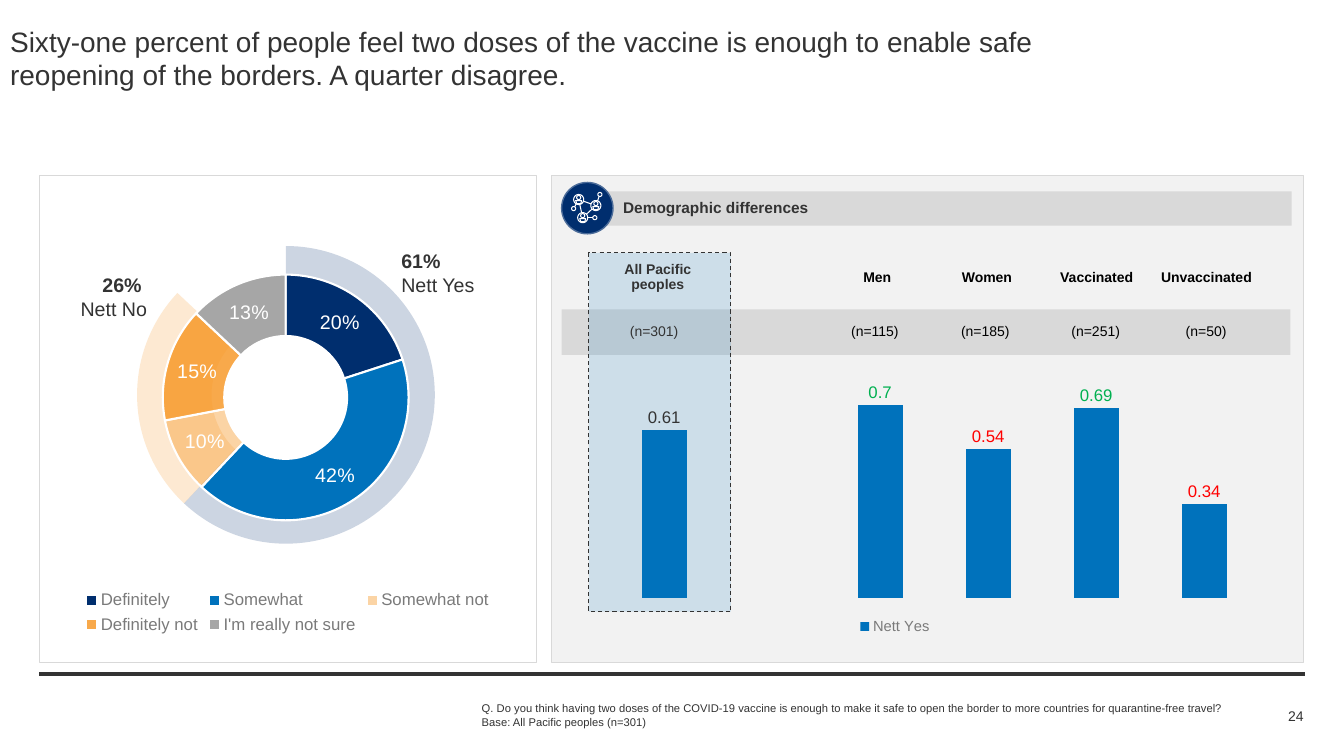
import math
from dataclasses import dataclass
from lxml import etree
from pptx import Presentation
from pptx import util as u
from pptx.chart import data as cd
from pptx.dml import color as col
from pptx.enum import chart as ch, dml, shapes as sh, text as tx
from pptx.oxml import ns


@dataclass
class Theme:
    font: str = "Arial"
    ink: str = "333333"
    black: str = "000000"
    white: str = "FFFFFF"
    navy: str = "002E6E"
    rim: str = "4C6C99"
    blue: str = "0072BC"
    gold: str = "F7941E"
    grey: str = "A6A6A6"
    mute: str = "7A7A7A"
    band: str = "D9D9D9"
    pale: str = "F2F2F2"
    up: str = "00B050"
    down: str = "FF0000"
    title: float = 20
    big: float = 14
    mid: float = 12
    head: float = 11
    key: float = 10.5
    base: float = 10
    note: float = 8


T = Theme()
IN = u.Inches
NO_GRID = "{2D5ABB26-0587-4C30-8999-92F81FD0307C}"


def rgb(code):
    return col.RGBColor.from_string(code)


def paint(fill, code, alpha=100):
    if code is None:
        fill.background()
        return
    fill.solid()
    fill.fore_color.rgb = rgb(code)
    if alpha < 100:
        tone = fill._xPr.find(ns.qn("a:solidFill"))[0]
        etree.SubElement(tone, ns.qn("a:alpha"), val=str(alpha * 1000))


def style(font, size, code=T.ink, bold=False):
    font.name, font.size, font.bold = T.font, u.Pt(size), bold
    font.color.rgb = rgb(code)


def place(host, box, inner=False):
    """Give a plot area or a legend a fixed place in its chart."""
    for old in host.findall(ns.qn("c:layout")):
        host.remove(old)
    lay = etree.Element(ns.qn("c:layout"))
    spot = etree.SubElement(lay, ns.qn("c:manualLayout"))
    tags = [("layoutTarget", "inner")] if inner else []
    tags += zip(("xMode", "yMode", "x", "y", "w", "h"), ("edge", "edge") + box)
    for tag, val in tags:
        etree.SubElement(spot, ns.qn("c:" + tag), val=str(val))
    host.insert(0 if inner else 1, lay)


def circle(x, y, r, n=24):
    turns = [2 * math.pi * i / n for i in range(n)]
    return [(x + r * math.cos(a), y + r * math.sin(a)) for a in turns]


def link(a, b):
    """Join the rims of two circles (x, y, r)."""
    gap = math.dist(a[:2], b[:2])
    ux, uy = (b[0] - a[0]) / gap, (b[1] - a[1]) / gap
    return [(a[0] + ux * a[2], a[1] + uy * a[2]), (b[0] - ux * b[2], b[1] - uy * b[2])]


class Deck:
    def __init__(self):
        self.prs = Presentation()
        self.prs.slide_width, self.prs.slide_height = IN(13.33), IN(7.5)
        self.slide = self.prs.slides.add_slide(self.prs.slide_layouts[6])
        self.shapes = self.slide.shapes

    def finish(self, item, fill, alpha, line, width):
        item.shadow.inherit = False
        paint(item.fill, fill, alpha)
        paint(item.line.fill, line)
        if line:
            item.line.width = u.Pt(width)
        return item

    def shape(self, box, fill=None, line=None, width=0.75, alpha=100, kind="RECTANGLE"):
        item = self.shapes.add_shape(sh.MSO_SHAPE[kind], *map(IN, box))
        return self.finish(item, fill, alpha, line, width)

    def draw(self, parts, line, width):
        form = None
        for part in parts:
            pts = [(IN(x), IN(y)) for x, y in part]
            if form is None:
                form = self.shapes.build_freeform(*pts[0])
            else:
                form.move_to(*pts[0])
            form.add_line_segments(pts[1:], close=len(pts) > 2)
        self.finish(form.convert_to_shape(), None, 100, line, width)

    def line(self, start, end, code, width):
        item = self.shapes.add_connector(sh.MSO_CONNECTOR.STRAIGHT, *map(IN, start + end))
        item.line.color.rgb, item.line.width = rgb(code), u.Pt(width)
        etree.SubElement(item._element.spPr, ns.qn("a:effectLst"))

    def text(self, box, lines, size, bolds=(), align="LEFT", anchor="TOP", inset=(0, 0)):
        frame = self.shapes.add_textbox(*map(IN, box)).text_frame
        frame.word_wrap = True
        frame.vertical_anchor = tx.MSO_ANCHOR[anchor]
        frame.margin_left = frame.margin_right = IN(inset[0])
        frame.margin_top = frame.margin_bottom = IN(inset[1])
        frame.text = "\n".join(lines)
        for i, para in enumerate(frame.paragraphs):
            para.alignment = tx.PP_ALIGN[align]
            for run in para.runs:
                style(run.font, size, bold=i in bolds)

    def row(self, box, words, bold, foot):
        grid = self.shapes.add_table(1, len(words), *map(IN, box)).table
        grid.first_row = grid.horz_banding = False
        grid._tbl.tblPr.find(ns.qn("a:tableStyleId")).text = NO_GRID
        for i, word in enumerate(words):
            cell = grid.cell(0, i)
            cell.fill.background()
            cell.vertical_anchor = tx.MSO_ANCHOR.MIDDLE
            cell.margin_left = cell.margin_right = 0
            cell.margin_top, cell.margin_bottom = IN(0.01), IN(foot)
            para = cell.text_frame.paragraphs[0]
            para.text, para.alignment = word, tx.PP_ALIGN.CENTER
            for run in para.runs:
                style(run.font, T.base, T.black if i else T.ink, bold)

    def chart(self, kind, box, cats, name, vals, plot, key=None, spot=None):
        data = cd.CategoryChartData()
        data.categories = cats
        data.add_series(name, vals)
        item = self.shapes.add_chart(ch.XL_CHART_TYPE[kind], *map(IN, box), data).chart
        style(item.font, T.base)
        item.has_title = False
        item.has_legend = key is not None
        if key:
            item.legend.position = ch.XL_LEGEND_POSITION.BOTTOM
            item.legend.include_in_layout = False
            style(item.legend.font, key, T.mute)
            place(item.legend._element, spot)
        place(item._chartSpace.chart.plotArea, plot, inner=True)
        return item

    def ring(self, box, cats, vals, plot, tones, hole, edge=None, key=None, spot=None):
        item = self.chart("DOUGHNUT", box, cats, "Series 1", vals, plot, key, spot)
        pie = item.plots[0]
        pie.vary_by_categories = True
        pie._element.find(ns.qn("c:holeSize")).set("val", str(hole))
        for i, (code, alpha) in enumerate(tones):
            form = pie.series[0].points[i].format
            paint(form.fill, code, alpha)
            paint(form.line.fill, edge)
            if edge:
                form.line.width = u.Pt(1.5)
        return pie

    def labels(self, host, size, code, fmt):
        tags = host.data_labels
        tags.show_value = True
        tags.number_format, tags.number_format_is_linked = fmt, False
        style(tags.font, size, code)
        return tags


def main():
    d = Deck()

    # Rule, right panel and bands
    d.line((0.39, 6.69), (12.94, 6.69), T.ink, 3)
    d.shape((5.47, 1.74, 7.46, 4.83), T.pale, T.band)
    d.shape((5.57, 3.07, 7.23, 0.45), T.band)
    focus = d.shape((5.84, 2.51, 1.41, 3.56), T.blue, T.ink, alpha=15)
    focus.line.dash_style = dml.MSO_LINE.DASH
    d.shape((5.67, 1.9, 7.14, 0.34), T.band)
    d.shape((5.57, 1.81, 0.51, 0.51), T.navy, T.rim, 1, kind="OVAL")

    # Group names and sample sizes
    d.row((5.98, 2.51, 6.53, 0.55),
          ["All Pacific peoples", "", "Men", "Women", "Vaccinated", "Unvaccinated"], True, 0.08)
    d.row((5.94, 3.01, 6.57, 0.55),
          ["(n=301)", "", "(n=115)", "(n=185)", "(n=251)", "(n=50)"], False, 0)
    d.text((6.18, 1.97, 6, 0.19), ["Demographic differences"], T.head, bolds=(0,))

    # Network icon: people, small nodes and links, then heads
    folk = [(5.74, 1.98, 0.05), (5.91, 2.04, 0.05), (5.78, 2.16, 0.05)]
    dots = [(5.69, 2.07, 0.02), (5.95, 1.93, 0.02), (5.9, 2.16, 0.02)]
    pairs = list(zip(folk, dots)) + [(folk[0], folk[1]), (folk[0], folk[2]), (folk[1], folk[2])]
    busts = [[(x - 0.02, y + 0.04), (x - 0.03, y + 0.01), (x + 0.03, y + 0.01), (x + 0.02, y + 0.04)]
             for x, y, r in folk]
    d.draw([circle(*node) for node in folk + dots] + [link(*p) for p in pairs] + busts, T.white, 0.75)
    for x, y, r in folk:
        d.draw([circle(x, y - 0.02, 0.02)], T.white, 0.75)

    # Nett ring behind the answer ring
    d.ring((0.89, 1.99, 4.19, 4.2), list("12345"), (62, None, 25, None, 13),
           (0.112, 0.06, 0.705, 0.798),
           [(T.navy, 20), (T.blue, 100), (T.gold, 20), (T.gold, 80), (None, 100)], 75)
    pie = d.ring((0.76, 2.19, 4.19, 4.2),
                 ["Definitely", "Somewhat", "Somewhat not", "Definitely not", "I'm really not sure"],
                 (0.2, 0.42, 0.1, 0.15, 0.13), (0.204, 0.088, 0.582, 0.659),
                 [(T.navy, 100), (T.blue, 100), (T.gold, 40), (T.gold, 80), (T.grey, 100)],
                 65, T.white, T.mid, (0.01, 0.86, 0.98, 0.13))
    d.labels(pie.series[0], T.big, T.white, "0%")

    # Nett Yes by group
    bars = d.chart("COLUMN_CLUSTERED", (5.2, 2.54, 7.28, 3.85), list("123456"), "Nett Yes",
                   (0.61, None, 0.7, 0.54, 0.69, 0.34), (0.117, 0.314, 0.883, 0.568),
                   T.key, (0.45, 0.92, 0.11, 0.07))
    bars.category_axis.visible = bars.value_axis.visible = False
    bars.value_axis.has_major_gridlines = False
    bars.value_axis.minimum_scale, bars.value_axis.maximum_scale = 0, 0.8
    plot = bars.plots[0]
    plot.vary_by_categories, plot.gap_width, plot.overlap = False, 140, -27
    yes = plot.series[0]
    paint(yes.format.fill, T.blue)
    out = ch.XL_LABEL_POSITION.OUTSIDE_END
    d.labels(yes, T.mid, T.ink, "General").position = out
    for i, code in enumerate((T.up, T.down, T.up, T.down), 2):
        tag = yes.points[i].data_label
        style(tag.font, T.mid, code)
        tag.position = out

    # Footnote, left panel, callouts, title and page number
    d.text((4.68, 6.91, 7.8, 0.5),
           ["Q. Do you think having two doses of the COVID-19 vaccine is enough to make it safe "
            "to open the border to more countries for quarantine-free travel?",
            "Base: All Pacific peoples (n=301)"], T.note, inset=(0.1, 0.05))
    d.shape((0.39, 1.74, 4.93, 4.83), line=T.band)
    d.text((3.98, 2.47, 1.21, 0.47), ["61%", "Nett Yes"], T.big, bolds=(0,))
    d.text((0.25, 2.71, 1.21, 0.47), ["26% ", "Nett No"], T.big, bolds=(0,), align="RIGHT")
    d.text((0.1, 0.24, 11.15, 0.44),
           ["Sixty-one percent of people feel two doses of the vaccine is enough to enable safe "
            "reopening of the borders. A quarter disagree."], T.title)
    d.text((11.87, 6.99, 1.06, 0.22), ["24"], T.base, align="RIGHT", anchor="MIDDLE")
    d.prs.save("out.pptx")


if __name__ == "__main__":
    main()
